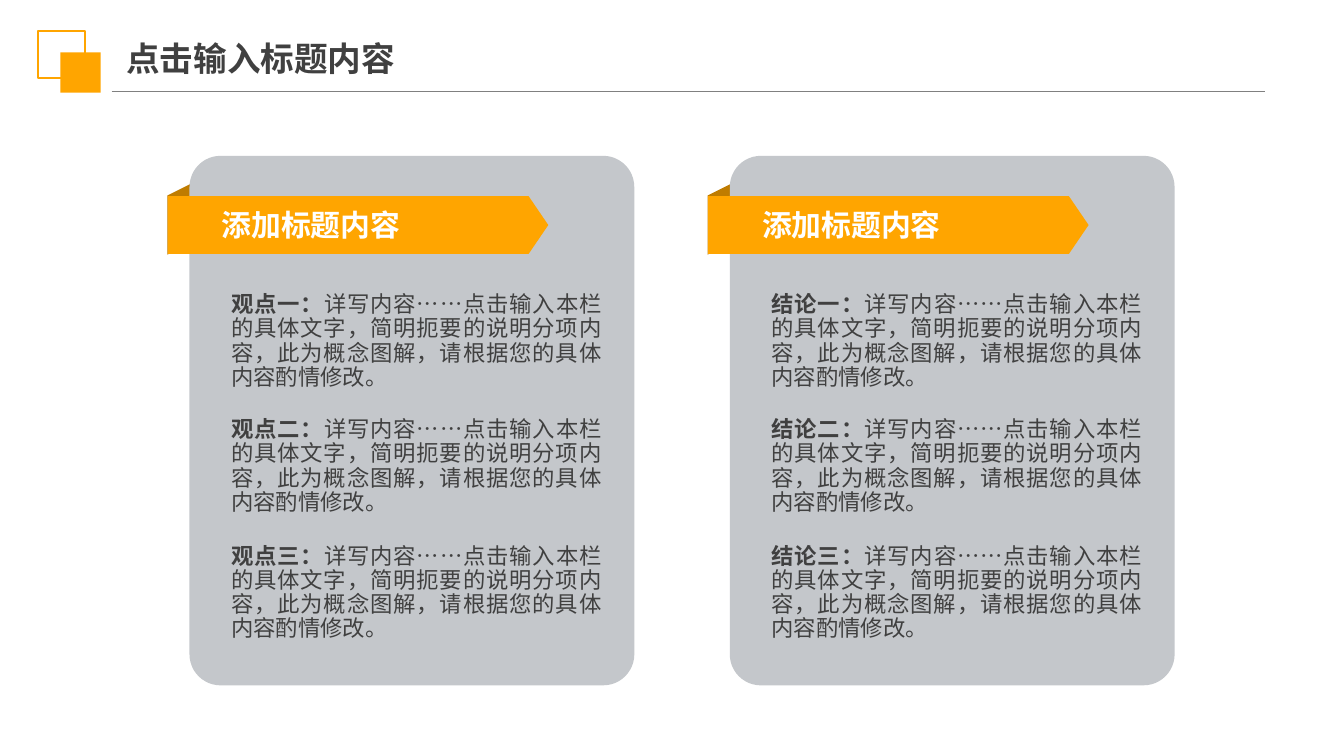
import lxml.etree
import pptx
import pptx.dml.color
import pptx.enum.shapes
import pptx.enum.text
import pptx.oxml.ns
import pptx.util

Inches = pptx.util.Inches
Pt = pptx.util.Pt
RGBColor = pptx.dml.color.RGBColor
SHAPES = pptx.enum.shapes.MSO_SHAPE
ALIGN = pptx.enum.text.PP_ALIGN
qn = pptx.oxml.ns.qn

TITLE = "点击输入标题内容"
HEADING = "添加标题内容"
DETAIL = "详写内容……点击输入本栏的具体文字，简明扼要的说明分项内容，此为概念图解，请根据您的具体内容酌情修改。"
CARDS = [
    ["观点一：", "观点二：", "观点三："],
    ["结论一：", "结论二：", "结论三："],
]

FONT = "Noto Sans CJK SC"
ORANGE = RGBColor(0xFF, 0xA5, 0x00)
DARK_ORANGE = RGBColor(0xBF, 0x7C, 0x00)
CARD_GRAY = RGBColor(0xC4, 0xC7, 0xCB)
LINE_GRAY = RGBColor(0x80, 0x80, 0x80)
TEXT_GRAY = RGBColor(0x40, 0x40, 0x40)
WHITE = RGBColor(0xFF, 0xFF, 0xFF)

CARD_LEFT, CARD_STEP = 1.41, 4.02
ITEM_TOPS = [2.18, 3.11, 4.05]


def add_shape(page, kind, left, top, width, height, fill=None):
    shape = page.shapes.add_shape(
        kind, Inches(left), Inches(top), Inches(width), Inches(height))
    shape.shadow.inherit = False
    if fill is None:
        shape.fill.background()
    else:
        shape.fill.solid()
        shape.fill.fore_color.rgb = fill
        shape.line.fill.background()
    return shape


def style_span(span, size, color, bold):
    span.font.size = Pt(size)
    span.font.bold = bold
    span.font.name = FONT
    span.font.color.rgb = color
    east_asian = lxml.etree.SubElement(span._r.get_or_add_rPr(), qn("a:ea"))
    east_asian.set("typeface", FONT)


def add_text(page, left, top, width, height, texts, size, color):
    box = page.shapes.add_textbox(
        Inches(left), Inches(top), Inches(width), Inches(height))
    frame = box.text_frame
    frame.word_wrap = True
    frame.margin_left = frame.margin_right = 0
    frame.margin_top = frame.margin_bottom = 0
    para = frame.paragraphs[0]
    for index, text in enumerate(texts):
        span = para.add_run()
        span.text = text
        style_span(span, size, color, index == 0)
    return para


def add_header(page):
    rule = page.shapes.add_connector(
        pptx.enum.shapes.MSO_CONNECTOR.STRAIGHT,
        Inches(0.83), Inches(0.68), Inches(9.41), Inches(0.68))
    rule.line.color.rgb = LINE_GRAY
    rule.line.width = Pt(0.75)
    lxml.etree.SubElement(rule._element.spPr, qn("a:effectLst"))

    outline = add_shape(page, SHAPES.RECTANGLE, 0.28, 0.23, 0.35, 0.35)
    outline.line.color.rgb = ORANGE
    outline.line.width = Pt(1)
    add_shape(page, SHAPES.RECTANGLE, 0.45, 0.39, 0.3, 0.3, ORANGE)

    title = page.shapes.title
    title.left, title.top = Inches(0.94), Inches(0.22)
    title.width, title.height = Inches(2.33), Inches(0.42)
    frame = title.text_frame
    frame.text = TITLE
    frame.auto_size = pptx.enum.text.MSO_AUTO_SIZE.NONE
    frame.word_wrap = False
    frame.vertical_anchor = pptx.enum.text.MSO_ANCHOR.MIDDLE
    frame.margin_left = frame.margin_right = 0
    para = frame.paragraphs[0]
    para.alignment = ALIGN.LEFT
    style_span(para.runs[0], 18, TEXT_GRAY, True)


def add_card(page, left, labels):
    fold = add_shape(
        page, SHAPES.FLOWCHART_DATA, left - 0.33, 1.51, 0.55, 0.22, DARK_ORANGE)
    fold.rotation = 270
    fold._element.spPr.xfrm.set("flipH", "1")

    panel = add_shape(
        page, SHAPES.ROUNDED_RECTANGLE, left, 1.16, 3.31, 3.94, CARD_GRAY)
    panel.adjustments[0] = 0.07
    banner = add_shape(
        page, SHAPES.PENTAGON, left - 0.16, 1.46, 2.83, 0.43, ORANGE)
    banner.adjustments[0] = 0.34
    add_text(page, left + 0.24, 1.54, 1.86, 0.27, [HEADING], 16, WHITE)

    for label, top in zip(labels, ITEM_TOPS):
        para = add_text(
            page, left + 0.31, top, 2.76, 0.73, [label, DETAIL], 12, TEXT_GRAY)
        para.alignment = ALIGN.JUSTIFY
        para.line_spacing = Pt(13)


def main():
    deck = pptx.Presentation()
    deck.slide_width = Inches(10)
    deck.slide_height = deck.slide_width * 9 // 16
    page = deck.slides.add_slide(deck.slide_layouts.get_by_name("Title Only"))
    add_header(page)
    for column, labels in enumerate(CARDS):
        add_card(page, CARD_LEFT + column * CARD_STEP, labels)
    deck.save("out.pptx")


if __name__ == "__main__":
    main()
